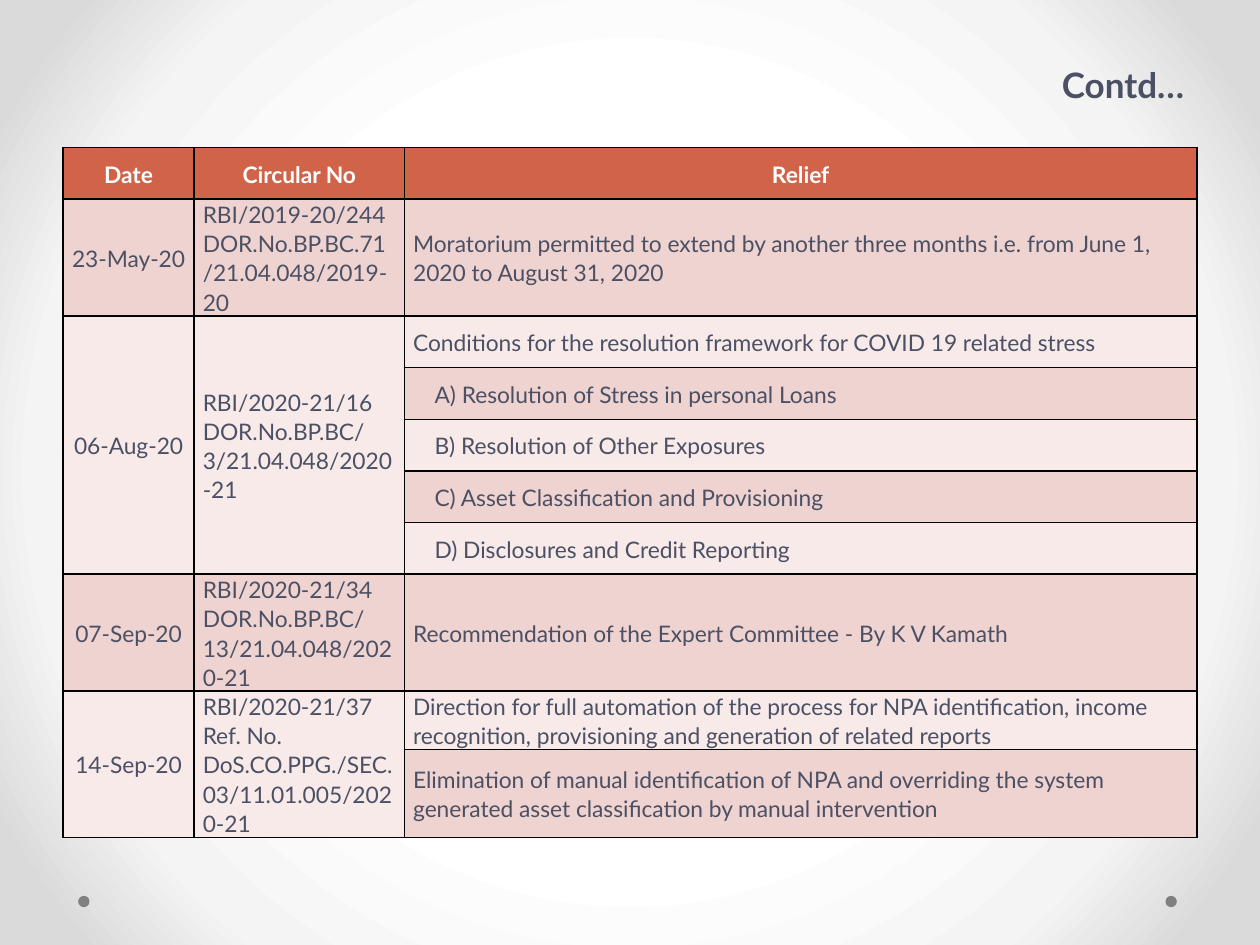
from copy import deepcopy

from lxml import etree
from pptx import Presentation
from pptx import util as u
from pptx.dml.color import RGBColor
from pptx.enum import shapes, text
from pptx.oxml import ns

HUES = {
    "head": "D16349", "dark": "EED3D0", "light": "F7EAE9", "ink": "4B5064",
    "white": "FFFFFF", "dot": "808080", "line": "000000",
}
GLOW = [(50, "FFFFFF"), (76, "F4F4F4"), (92, "DADADA")]
COLS = [1.04, 1.67, 6.29]
ROWS = [
    ("Date", "Circular No", "Relief"),
    ("23-May-20", "RBI/2019-20/244\nDOR.No.BP.BC.71/21.04.048/2019-20",
     "Moratorium permitted to extend by another three months i.e. from June 1, "
     "2020 to August 31, 2020"),
    ("06-Aug-20", "RBI/2020-21/16\nDOR.No.BP.BC/3/21.04.048/2020-21",
     "Conditions for the resolution framework for COVID 19 related stress"),
    ("", "", "A) Resolution of Stress in personal Loans"),
    ("", "", "B) Resolution of Other Exposures"),
    ("", "", "C) Asset Classification and Provisioning"),
    ("", "", "D) Disclosures and Credit Reporting"),
    ("07-Sep-20", "RBI/2020-21/34\nDOR.No.BP.BC/13/21.04.048/2020-21",
     "Recommendation of the Expert Committee - By K V Kamath"),
    ("14-Sep-20", "RBI/2020-21/37\nRef. No. DoS.CO.PPG./SEC.03/11.01.005/2020-21",
     "Direction for full automation of the process for NPA identification, "
     "income recognition, provisioning and generation of related reports"),
    ("", "", "Elimination of manual identification of NPA and overriding the "
     "system generated asset classification by manual intervention"),
]
SPANS = [(2, 6), (8, 9)]
SUBS = range(3, 7)
CELL = {
    "margin_left": u.Inches(0.07), "margin_right": u.Inches(0.07),
    "margin_top": 0, "margin_bottom": 0,
    "vertical_anchor": text.MSO_ANCHOR.MIDDLE,
}


def apply(item, vals):
    for key, val in vals.items():
        setattr(item, key, val)


def tint(fill, hue):
    fill.solid()
    fill.fore_color.rgb = RGBColor.from_string(HUES[hue])


def write(para, words, size, hue, bold, align):
    para.text = words
    para.alignment = align
    for run in para.runs:
        apply(run.font, {"name": "Lato", "size": u.Pt(size), "bold": bold})
        run.font.color.rgb = RGBColor.from_string(HUES[hue])
    for gap in para._p.findall(ns.qn("a:br")):
        gap.append(deepcopy(para.runs[0]._r.rPr))


def glow(slide):
    fill = slide.background.fill
    fill.solid()
    old = slide._element.find(".//" + ns.qn("p:bgPr"))[0]
    stops = "".join(
        f'<a:gs pos="{pos * 1000}"><a:srgbClr val="{hue}"/></a:gs>'
        for pos, hue in GLOW)
    grad = etree.fromstring(
        f'<a:gradFill {ns.nsdecls("a")} rotWithShape="1"><a:gsLst>{stops}</a:gsLst>'
        '<a:path path="circle"><a:fillToRect l="50000" t="50000" r="50000" '
        'b="50000"/></a:path></a:gradFill>')
    old.getparent().replace(old, grad)


def dot(slide, left):
    mark = slide.shapes.add_shape(
        shapes.MSO_SHAPE.OVAL, u.Inches(left), u.Inches(7.11),
        u.Inches(0.09), u.Inches(0.09))
    mark.shadow.inherit = False
    tint(mark.fill, "dot")
    mark.line.fill.background()


def title(slide):
    box = slide.shapes.title
    apply(box, {"left": u.Inches(0.5), "top": u.Inches(0.45),
                "width": u.Inches(9), "height": u.Inches(0.44)})
    apply(box.text_frame, {"vertical_anchor": text.MSO_ANCHOR.TOP,
                           "word_wrap": True,
                           "auto_size": text.MSO_AUTO_SIZE.SHAPE_TO_FIT_TEXT})
    write(box.text_frame.paragraphs[0], "Contd…", 20, "ink", True,
          text.PP_ALIGN.RIGHT)


def border(cell):
    props = cell._tc.get_or_add_tcPr()
    for pos, side in enumerate("LRTB"):
        props.insert(pos, etree.fromstring(
            f'<a:ln{side} {ns.nsdecls("a")} w="{u.Pt(1)}"><a:solidFill>'
            f'<a:srgbClr val="{HUES["line"]}"/></a:solidFill></a:ln{side}>'))


def fill_cell(cell, row, col, words):
    head = row == 0
    mid = head or col == 0
    apply(cell, CELL)
    tint(cell.fill, "head" if head else "dark" if row % 2 else "light")
    border(cell)
    para = cell.text_frame.paragraphs[0]
    para.line_spacing = 1.07
    if words:
        write(para, words, 13, "white" if head else "ink", head,
              text.PP_ALIGN.CENTER if mid else text.PP_ALIGN.LEFT)
    if col == 2 and row in SUBS:
        para._p.get_or_add_pPr().set("indent", str(u.Inches(0.17)))


def table(slide):
    grid = slide.shapes.add_table(
        len(ROWS), len(COLS), u.Inches(0.5), u.Inches(1.17),
        u.Inches(9), u.Inches(0.41 * len(ROWS))).table
    apply(grid, {"first_row": False, "horz_banding": False})
    for col, width in zip(grid.columns, COLS):
        col.width = u.Inches(width)
    for row, line in enumerate(ROWS):
        grid.rows[row].height = u.Inches(0.41)
        for col, words in enumerate(line):
            fill_cell(grid.cell(row, col), row, col, words)
    for top, end in SPANS:
        for col in range(2):
            grid.cell(top, col).merge(grid.cell(end, col))


def main():
    deck = Presentation()
    apply(deck, {"slide_width": u.Inches(10), "slide_height": u.Inches(7.5)})
    slide = deck.slides.add_slide(deck.slide_layouts[5])
    glow(slide)
    for left in (9.25, 0.62):
        dot(slide, left)
    table(slide)
    title(slide)
    deck.save("out.pptx")


if __name__ == "__main__":
    main()
